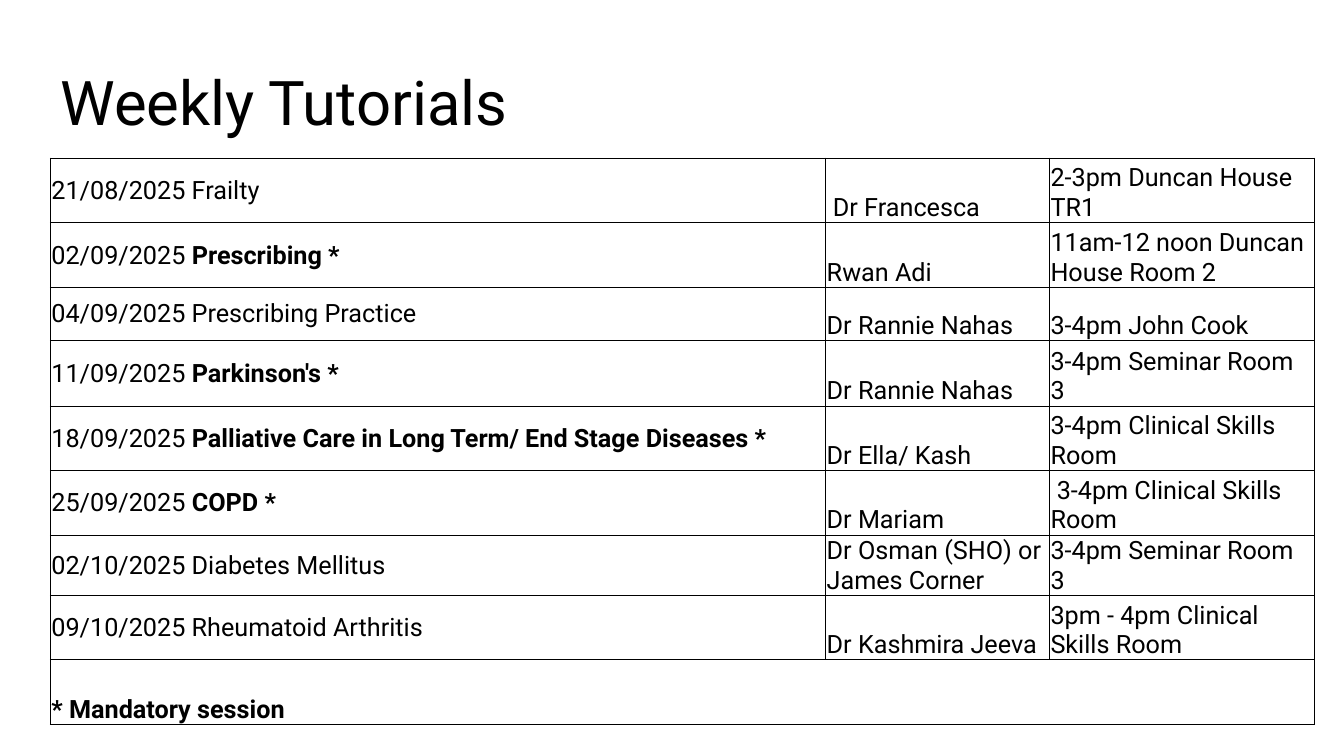
from dataclasses import dataclass

from lxml.etree import SubElement
from pptx import Presentation
from pptx.dml.color import RGBColor
from pptx.enum.text import MSO_ANCHOR as Anchor, MSO_AUTO_SIZE as AutoSize, PP_ALIGN as Align
from pptx.oxml.ns import qn
from pptx.slide import Slide
from pptx.table import _Cell as Cell
from pptx.text.text import _Paragraph as Paragraph
from pptx.util import Inches, Pt

FONT = "Roboto"
BLACK = "000000"
WHITE = "FFFFFF"
COLUMN_WIDTHS = (7.69, 2.22, 2.63)
FOOTER_HEIGHT = 0.64


@dataclass(frozen=True)
class Tutorial:
    date: str
    topic: str
    tutor: str
    place: str
    mandatory: bool = False
    height: float = 0.64


TUTORIALS = (
    Tutorial("21/08/2025", "Frailty", " Dr Francesca", "2-3pm Duncan House TR1"),
    Tutorial("02/09/2025", "Prescribing", "Rwan Adi",
             "11am-12 noon Duncan House Room 2", mandatory=True),
    Tutorial("04/09/2025", "Prescribing Practice", "Dr Rannie Nahas",
             "3-4pm John Cook", height=0.53),
    Tutorial("11/09/2025", "Parkinson's", "Dr Rannie Nahas",
             "3-4pm Seminar Room 3", mandatory=True, height=0.65),
    Tutorial("18/09/2025", "Palliative Care in Long Term/ End Stage Diseases",
             "Dr Ella/ Kash", "3-4pm Clinical Skills Room", mandatory=True),
    Tutorial("25/09/2025", "COPD", "Dr Mariam", " 3-4pm Clinical Skills Room",
             mandatory=True),
    Tutorial("02/10/2025", "Diabetes Mellitus", "Dr Osman (SHO) or James Corner",
             "3-4pm Seminar Room 3", height=0.53),
    Tutorial("09/10/2025", "Rheumatoid Arthritis", "Dr Kashmira Jeeva",
             "3pm - 4pm Clinical Skills Room"),
)


def colour(value: str) -> RGBColor:
    return RGBColor.from_string(value)


def add_run(paragraph: Paragraph, text: str, size: float, bold: bool = False) -> None:
    run = paragraph.add_run()
    run.text = text
    run.font.name = FONT
    run.font.size = Pt(size)
    run.font.bold = bold
    run.font.color.rgb = colour(BLACK)


def add_borders(cell: Cell) -> None:
    properties = cell._tc.get_or_add_tcPr()
    for side in ("lnL", "lnR", "lnT", "lnB"):
        line = SubElement(properties, qn(f"a:{side}"), w=str(Pt(1)))
        fill = SubElement(line, qn("a:solidFill"))
        SubElement(fill, qn("a:srgbClr"), val=BLACK)


def format_cell(cell: Cell) -> None:
    add_borders(cell)
    cell.fill.solid()
    cell.fill.fore_color.rgb = colour(WHITE)
    cell.margin_left = cell.margin_right = cell.margin_top = Inches(0.01)
    cell.margin_bottom = Inches(0)
    cell.vertical_anchor = Anchor.BOTTOM


def write_cell(cell: Cell, text: str, bold: bool = False) -> None:
    add_run(cell.text_frame.paragraphs[0], text, 18, bold)


def add_title(slide: Slide) -> None:
    title = slide.shapes.title
    title.left, title.top = Inches(0.5), Inches(0.32)
    title.width, title.height = Inches(11.5), Inches(1.45)
    frame = title.text_frame
    frame.word_wrap = True
    frame.auto_size = AutoSize.NONE
    frame.vertical_anchor = Anchor.MIDDLE
    paragraph = frame.paragraphs[0]
    paragraph.alignment = Align.LEFT
    paragraph.line_spacing = 0.9
    add_run(paragraph, "Weekly Tutorials", 44)


def add_timetable(slide: Slide) -> None:
    heights = [tutorial.height for tutorial in TUTORIALS] + [FOOTER_HEIGHT]
    table = slide.shapes.add_table(
        len(heights), len(COLUMN_WIDTHS), Inches(0.5), Inches(1.57),
        Inches(sum(COLUMN_WIDTHS)), Inches(sum(heights))).table
    table.first_row = table.horz_banding = False
    for column, width in zip(table.columns, COLUMN_WIDTHS):
        column.width = Inches(width)
    for row, height in zip(table.rows, heights):
        row.height = Inches(height)
    for cell in table.iter_cells():
        format_cell(cell)

    for index, tutorial in enumerate(TUTORIALS):
        session, tutor, place = table.rows[index].cells
        session.vertical_anchor = Anchor.MIDDLE
        if tutorial.mandatory:
            write_cell(session, f"{tutorial.date} ")
            write_cell(session, f"{tutorial.topic} *", bold=True)
        else:
            write_cell(session, f"{tutorial.date} {tutorial.topic}")
        write_cell(tutor, tutorial.tutor)
        write_cell(place, tutorial.place)

    footer = table.cell(len(TUTORIALS), 0)
    footer.merge(table.cell(len(TUTORIALS), len(COLUMN_WIDTHS) - 1))
    write_cell(footer, "* Mandatory session", bold=True)


def main() -> None:
    presentation = Presentation()
    presentation.slide_width = Inches(13.33)
    presentation.slide_height = Inches(7.5)
    slide = presentation.slides.add_slide(presentation.slide_layouts.get_by_name("Title Only"))
    slide.background.fill.solid()
    slide.background.fill.fore_color.rgb = colour(WHITE)
    add_title(slide)
    add_timetable(slide)
    presentation.save("out.pptx")


if __name__ == "__main__":
    main()
